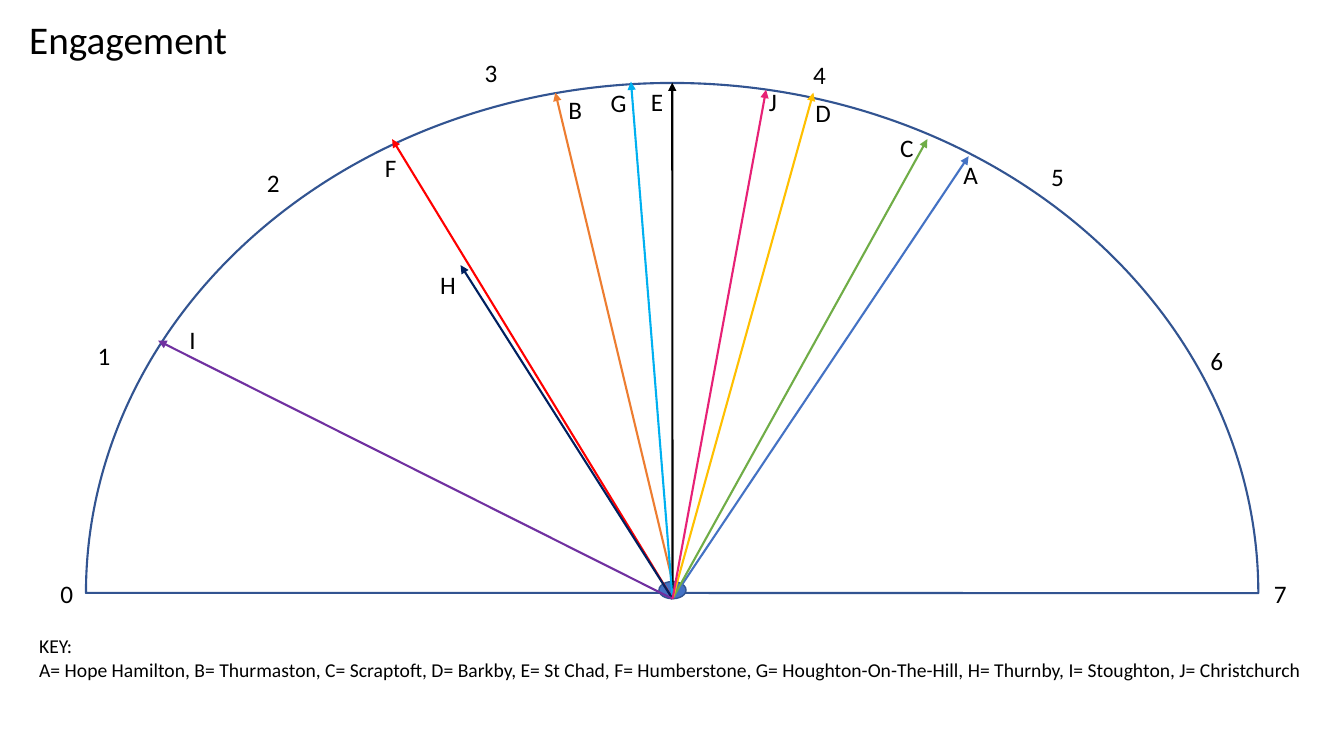
"""Build the Engagement dial slide, with one coloured needle per place."""
from pptx import Presentation
from pptx.dml.color import RGBColor
from pptx.enum.shapes import MSO_CONNECTOR, MSO_SHAPE
from pptx.enum.text import MSO_ANCHOR, PP_ALIGN
from pptx.oxml.ns import qn
from pptx.util import Pt
from lxml.etree import SubElement

FONT = "Calibri"
OUTLINE = "325491"
HUB_X, HUB_TOP, HUB_BOTTOM = 480.4, 415.4, 427.7

SCALE = [
    ("0", 36, 409.7), ("1", 62.6, 239.8), ("2", 183.6, 115.9), ("3", 339.1, 37.4),
    ("4", 573.8, 38.9), ("5", 743.8, 111.6), ("6", 857.5, 243.4), ("7", 902.9, 409.7),
]

# letter, colour, needle start y, needle tip, label position
NEEDLES = [
    ("A", "4472C4", HUB_BOTTOM, (691.9, 111.6), (681.1, 110.2)),
    ("B", "ED7D31", HUB_TOP, (396.7, 66.2), (398.9, 64.1)),
    ("C", "70AD47", HUB_BOTTOM, (662.4, 99.4), (635.8, 90.7)),
    ("D", "FFC000", HUB_BOTTOM, (581, 66.2), (575.3, 66.2)),
    ("E", "000000", HUB_BOTTOM, (480.2, 59), (457.9, 58.3)),
    ("F", "FF0000", HUB_BOTTOM, (280.1, 99.4), (267.8, 105.1)),
    ("G", "00B0F0", HUB_BOTTOM, (450.7, 58.3), (429.1, 59)),
    ("H", "002060", HUB_BOTTOM, (329, 189.4), (307.4, 188.6)),
    ("I", "7030A0", HUB_BOTTOM, (113, 243.4), (128.2, 228.2)),
    ("J", "E72176", HUB_BOTTOM, (547.2, 64.1), (542.2, 58.3)),
]

KEY = [
    "KEY:",
    "A= Hope Hamilton, B= Thurmaston, C= Scraptoft, D= Barkby, E= St Chad, "
    "F= Humberstone, G= Houghton-On-The-Hill, H= Thurnby, I= Stoughton, J= Christchurch",
]


def colour(hex_string):
    """Turn a hex string into a colour."""
    return RGBColor.from_string(hex_string)


def write(shape, *lines, size=18, color="000000"):
    """Fill a shape with left-aligned lines of text."""
    frame = shape.text_frame
    frame.word_wrap = True
    frame.vertical_anchor = MSO_ANCHOR.TOP
    frame.text = "\n".join(lines)
    for paragraph in frame.paragraphs:
        paragraph.alignment = PP_ALIGN.LEFT
        paragraph.line_spacing = 1.0
        paragraph.space_before = Pt(0)
        font = paragraph.runs[0].font
        font.name, font.size = FONT, Pt(size)
        font.color.rgb = colour(color)


def add_title(slide, text):
    """Place and fill the title placeholder."""
    title = slide.shapes.title
    title.left, title.top, title.width, title.height = Pt(13.7), Pt(7.2), Pt(437), Pt(41)
    write(title, text, size=28)


def add_label(slide, left, top, *lines, width=28.8, height=28.8, size=18):
    """Add a text box."""
    box = slide.shapes.add_textbox(Pt(left), Pt(top), Pt(width), Pt(height))
    write(box, *lines, size=size)


def add_outline(slide, preset, left, top, width, height, fill=None, weight=1.0):
    """Add a preset shape with the dial's outline colour."""
    shape = slide.shapes.add_shape(preset, Pt(left), Pt(top), Pt(width), Pt(height))
    shape.shadow.inherit = False
    shape.line.color.rgb = colour(OUTLINE)
    shape.line.width = Pt(weight)
    if fill:
        shape.fill.solid()
        shape.fill.fore_color.rgb = colour(fill)
    else:
        shape.fill.background()
    return shape


def add_needle(slide, start, tip, color):
    """Add a line from the hub with an arrowhead at its tip."""
    needle = slide.shapes.add_connector(
        MSO_CONNECTOR.STRAIGHT, *(Pt(value) for value in (*start, *tip)))
    needle.line.color.rgb = colour(color)
    needle.line.width = Pt(1.5)
    SubElement(needle.line._get_or_add_ln(), qn("a:tailEnd"), type="triangle")
    SubElement(needle._element.spPr, qn("a:effectLst"))
    return needle


def main():
    """Build and save the slide."""
    presentation = Presentation()
    presentation.slide_width, presentation.slide_height = Pt(960), Pt(540)
    slide = presentation.slides.add_slide(presentation.slide_layouts[5])
    add_title(slide, "Engagement")

    dial = add_outline(slide, MSO_SHAPE.PIE, 61.4, 59.2, 837.4, 728.6, weight=1.5)
    dial.adjustments[0], dial.adjustments[1] = 0, 108.015
    dial.rotation = 180
    hub = add_outline(slide, MSO_SHAPE.OVAL, HUB_X - 9.7, HUB_TOP,
                      19.4, HUB_BOTTOM - HUB_TOP, fill="4472C4")

    for number, left, top in SCALE:
        add_label(slide, left, top, number, height=36)
    for letter, color, start_y, tip, label in NEEDLES:
        needle = add_needle(slide, (HUB_X, start_y), tip, color)
        if start_y == HUB_TOP:
            needle.begin_connect(hub, 0)
        add_label(slide, *label, letter)
    add_label(slide, 20.9, 449.3, *KEY, width=939, height=41, size=14)

    presentation.save("out.pptx")


if __name__ == "__main__":
    main()
